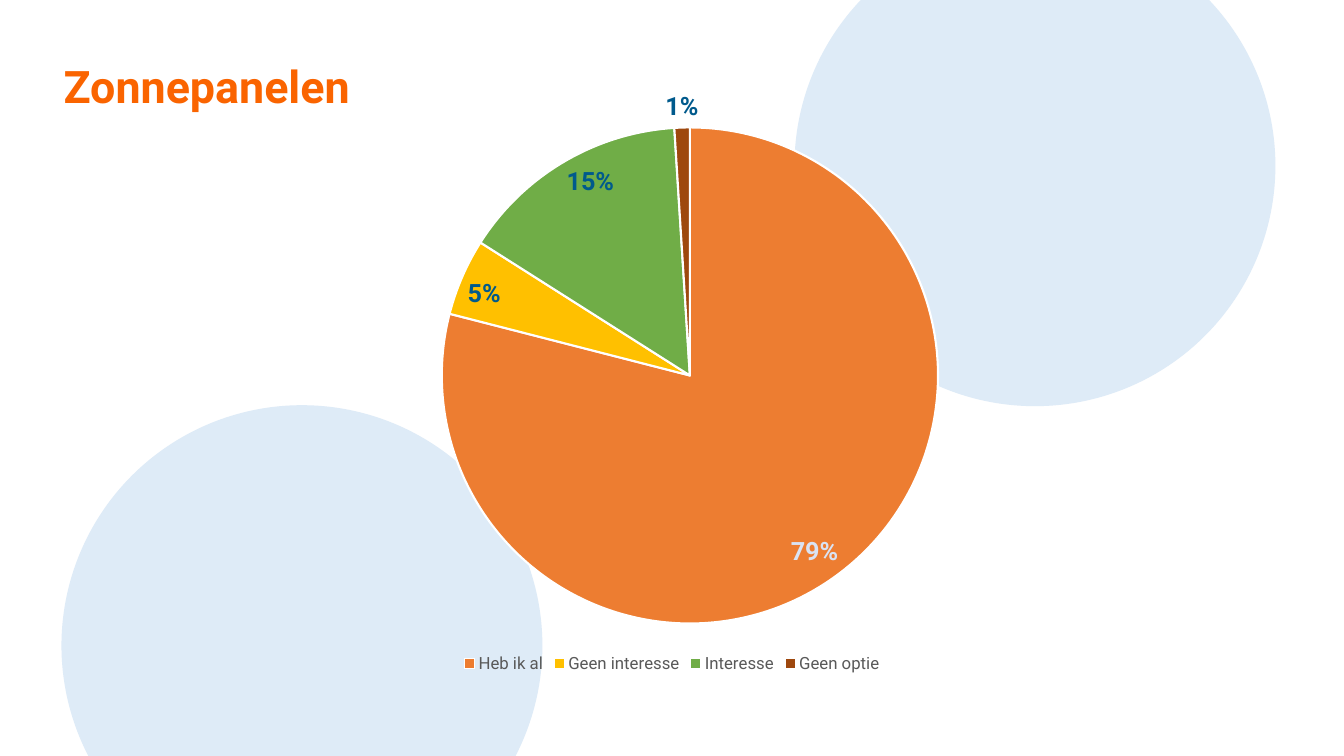
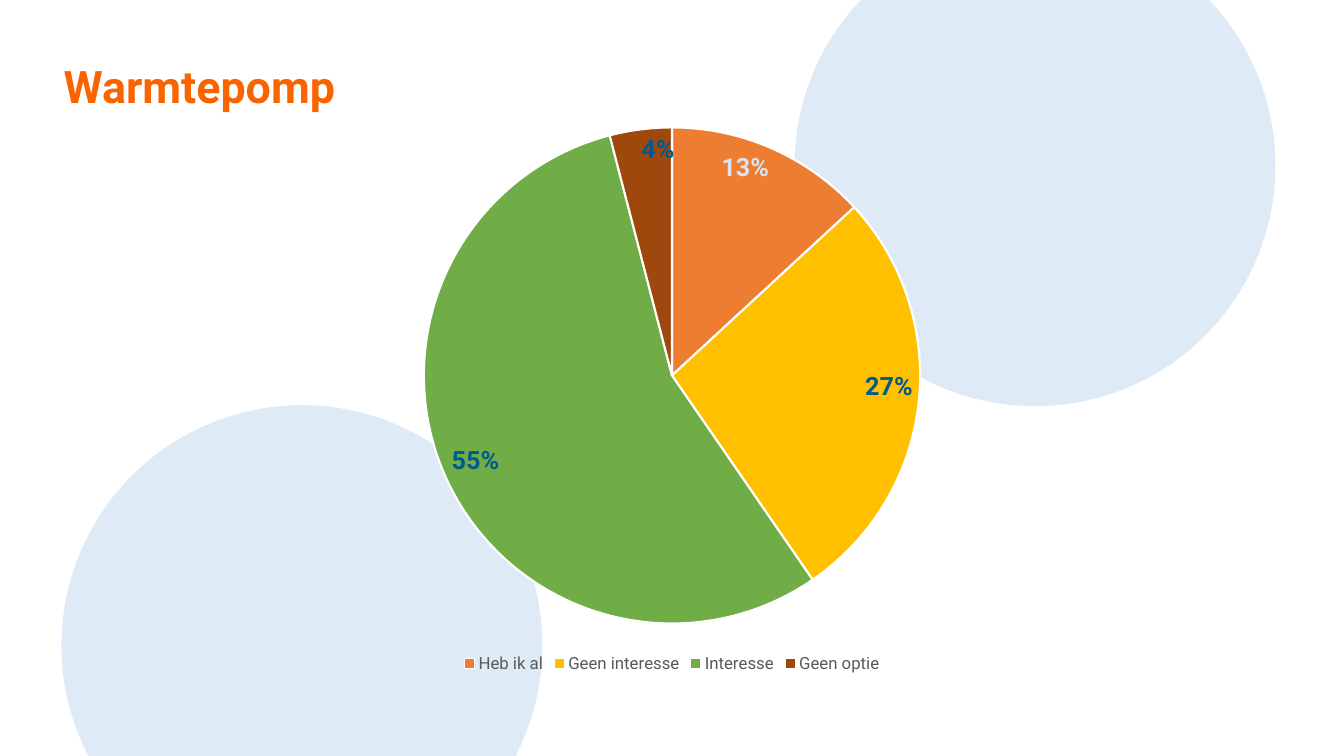
from dataclasses import dataclass

from lxml import etree
from pptx import Presentation
from pptx.chart.chart import Chart
from pptx.chart.data import CategoryChartData
from pptx.dml.color import RGBColor
from pptx.enum.chart import XL_CHART_TYPE, XL_LABEL_POSITION, XL_LEGEND_POSITION
from pptx.enum.shapes import MSO_SHAPE
from pptx.enum.text import MSO_ANCHOR, PP_ALIGN
from pptx.oxml.ns import qn
from pptx.slide import Slide
from pptx.util import Inches, Pt

FONT = "Roboto"
COLORS = {
    "title": "FA6400",
    "circle": "DEEBF7",
    "legend": "595959",
    "edge": "FFFFFF",
    "text": "000000",
    "light": "DAE3F3",
    "dark": "005A8C",
}
# Category, slice colour, label colour
PARTS = [
    ("Heb ik al", "ED7D31", "light"),
    ("Geen interesse", "FFC000", "dark"),
    ("Interesse", "70AD47", "dark"),
    ("Geen optie", "9E480E", "dark"),
]
CIRCLES = [(7.88, -0.74), (0.61, 4.02)]
SIZE = 4.77


@dataclass
class Survey:
    title: str
    values: tuple[int, ...]
    left: float  # left edge of the pie, as a share of the chart width
    top: float


SURVEYS = [
    Survey("Zonnepanelen", (79, 5, 15, 1), 0.24, 0.08),
    Survey("Warmtepomp", (13, 27, 55, 4), 0.22, 0.08),
]


def color(name: str) -> RGBColor:
    return RGBColor.from_string(COLORS[name])


def add_circles(slide: Slide) -> None:
    """Draw the circles and move them to the layout, where all slides share them."""
    anchor = slide.slide_layout.placeholders[0].element
    for index, (left, top) in enumerate(CIRCLES):
        circle = slide.shapes.add_shape(
            MSO_SHAPE.OVAL, Inches(left), Inches(top), Inches(SIZE), Inches(SIZE))
        circle.shadow.inherit = False
        circle.fill.solid()
        circle.fill.fore_color.rgb = color("circle")
        circle.line.fill.background()
        circle.element.nvSpPr.cNvPr.set("id", str(20 + index))
        anchor.addprevious(circle.element)


def set_title(slide: Slide, text: str) -> None:
    title = slide.shapes.title
    title.left, title.top = Inches(0.58), Inches(0.41)
    title.width, title.height = Inches(11.71), Inches(0.76)
    frame = title.text_frame
    frame.text = text
    frame.vertical_anchor = MSO_ANCHOR.BOTTOM
    frame.margin_left = frame.margin_right = Inches(0.05)
    frame.margin_top = frame.margin_bottom = Inches(0.05)
    para = frame.paragraphs[0]
    para.alignment = PP_ALIGN.LEFT
    para.line_spacing = 0.9
    para.font.name, para.font.size, para.font.bold = FONT, Pt(32), True
    para.font.color.rgb = color("title")


def place_pie(chart: Chart, left: float, top: float) -> None:
    area = chart.element.find(".//" + qn("c:plotArea"))
    layout = area.find(qn("c:layout"))
    if layout is None:
        layout = etree.Element(qn("c:layout"))
        area.insert(0, layout)
    manual = etree.SubElement(layout, qn("c:manualLayout"))
    for tag, value in [("layoutTarget", "inner"), ("xMode", "edge"), ("yMode", "edge"),
                       ("x", left), ("y", top), ("w", 0.56), ("h", 0.83)]:
        etree.SubElement(manual, qn("c:" + tag)).set("val", str(value))


def add_pie(slide: Slide, survey: Survey) -> None:
    data = CategoryChartData(number_format='0"%"')
    data.categories = [name for name, _, _ in PARTS]
    data.add_series("Series 1", survey.values)
    chart = slide.shapes.add_chart(
        XL_CHART_TYPE.PIE, Inches(2.22), Inches(0.79), Inches(8.89), Inches(5.93), data).chart
    chart.font.name, chart.font.size = "Calibri", Pt(10)
    chart.font.color.rgb = color("text")
    chart.has_title = False
    chart.has_legend = True
    legend = chart.legend
    legend.position = XL_LEGEND_POSITION.BOTTOM
    legend.include_in_layout = False
    legend.font.name, legend.font.size = FONT, Pt(12)
    legend.font.color.rgb = color("legend")
    place_pie(chart, survey.left, survey.top)

    plot = chart.plots[0]
    plot.vary_by_categories = True
    series = plot.series[0]
    labels = series.data_labels
    labels.show_value = True
    labels.number_format = '0"%"'
    labels.number_format_is_linked = False
    for index, (_, fill, shade) in enumerate(PARTS):
        point = series.points[index]
        point.format.fill.solid()
        point.format.fill.fore_color.rgb = RGBColor.from_string(fill)
        point.format.line.color.rgb = color("edge")
        point.format.line.width = Pt(1.5)
        label = point.data_label
        label.font.name, label.font.size, label.font.bold = FONT, Pt(18), True
        label.font.color.rgb = color(shade)
        thin = survey.values[index] < 3
        label.position = (XL_LABEL_POSITION.OUTSIDE_END if thin
                          else XL_LABEL_POSITION.INSIDE_END)


def main() -> None:
    deck = Presentation()
    deck.slide_width, deck.slide_height = Inches(13.33), Inches(7.5)
    layout = deck.slide_layouts[5]
    for index, survey in enumerate(SURVEYS):
        slide = deck.slides.add_slide(layout)
        if index == 0:
            add_circles(slide)
        set_title(slide, survey.title)
        add_pie(slide, survey)
    deck.save("out.pptx")


if __name__ == "__main__":
    main()
